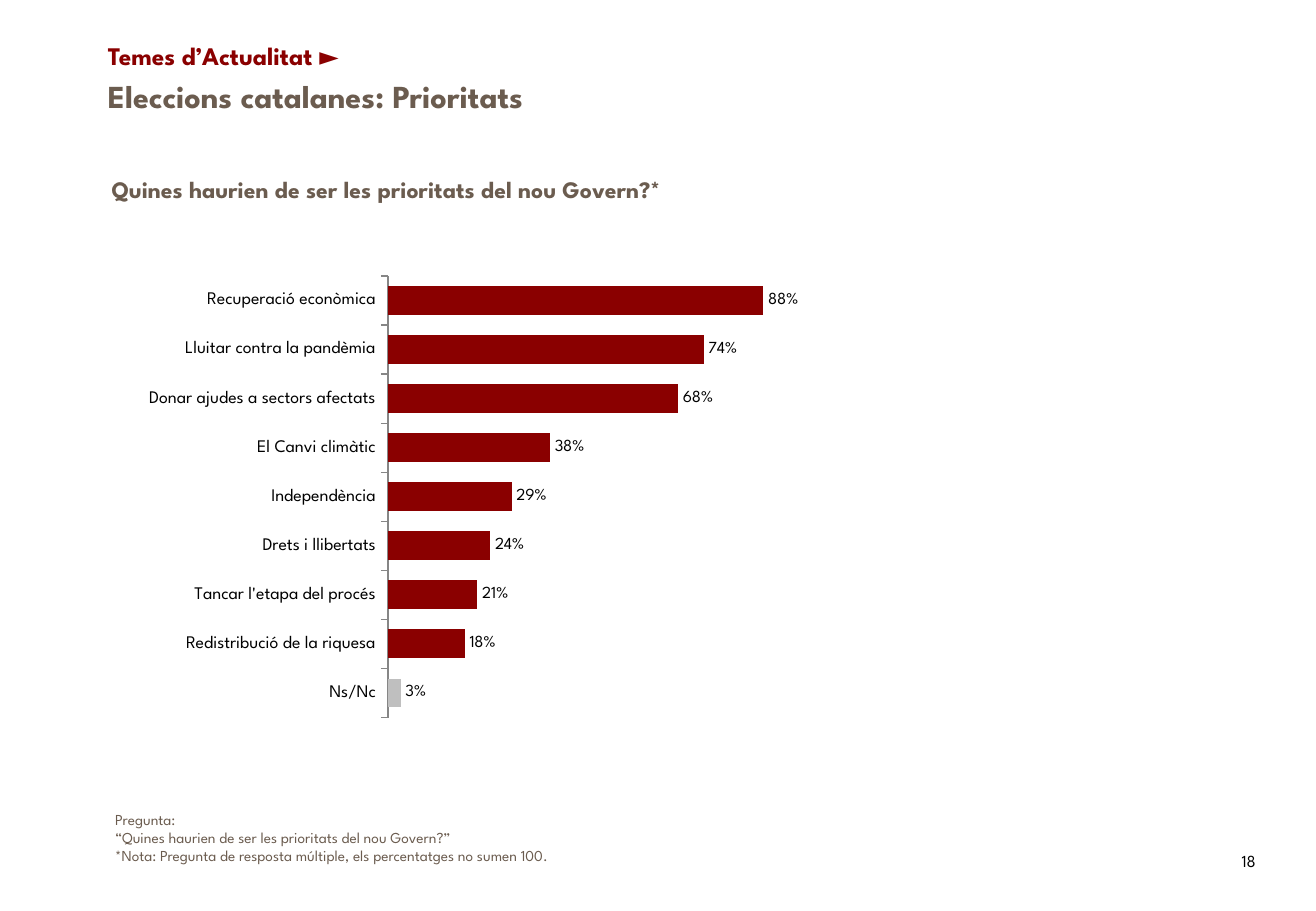
"""Build the slide on the priorities of the new Catalan government."""
from dataclasses import dataclass

from pptx import Presentation
from pptx.chart.chart import Chart
from pptx.chart.data import CategoryChartData
from pptx.dml.color import RGBColor
from pptx.enum.chart import XL_CHART_TYPE as ChartType
from pptx.enum.chart import XL_LABEL_POSITION as LabelPosition
from pptx.enum.chart import XL_TICK_MARK as TickMark
from pptx.enum.text import MSO_ANCHOR as Anchor
from pptx.oxml import parse_xml
from pptx.oxml.ns import nsdecls, qn
from pptx.slide import Slide
from pptx.util import Inches, Pt


@dataclass(frozen=True)
class Theme:
    font: str = "League Spartan"
    red: RGBColor = RGBColor(0x8A, 0x00, 0x00)
    brown: RGBColor = RGBColor(0x6B, 0x5C, 0x4F)
    black: RGBColor = RGBColor(0x00, 0x00, 0x00)
    gray: RGBColor = RGBColor(0xBF, 0xBF, 0xBF)
    axis: RGBColor = RGBColor(0x86, 0x86, 0x86)
    title: float = 19
    section: float = 15
    question: float = 14
    category: float = 10.5
    body: float = 10
    note: float = 9


@dataclass(frozen=True)
class Box:
    left: float
    top: float
    width: float
    height: float

    def lengths(self) -> list[int]:
        return [Inches(n) for n in (self.left, self.top, self.width, self.height)]


@dataclass(frozen=True)
class Label:
    box: Box
    lines: tuple[str, ...]
    size: float
    color: RGBColor
    bold: bool = False
    anchor: Anchor = Anchor.TOP


@dataclass(frozen=True)
class Priority:
    name: str
    share: float


THEME = Theme()

LABELS = (
    Label(Box(0.82, 1.39, 5.33, 0.34),
          ("Quines haurien de ser les prioritats del nou Govern?*",),
          THEME.question, THEME.brown, bold=True),
    Label(Box(0.79, 0.28, 9.56, 0.36), ("Temes d’Actualitat ►",),
          THEME.section, THEME.red, bold=True, anchor=Anchor.MIDDLE),
    Label(Box(0.79, 0.63, 9.81, 0.31), ("Eleccions catalanes: Prioritats",),
          THEME.title, THEME.brown, bold=True, anchor=Anchor.MIDDLE),
    Label(Box(10.12, 6.95, 0.67, 0.4), ("18",), THEME.body, THEME.black),
    Label(Box(0.85, 6.62, 9.57, 0.56),
          ("Pregunta:",
           "“Quines haurien de ser les prioritats del nou Govern?”",
           "*Nota: Pregunta de resposta múltiple, els percentatges no sumen 100."),
          THEME.note, THEME.brown),
)

PRIORITIES = (
    Priority("Recuperació econòmica", 0.88),
    Priority("Lluitar contra la pandèmia", 0.74),
    Priority("Donar ajudes a sectors afectats", 0.68),
    Priority("El Canvi climàtic", 0.38),
    Priority("Independència", 0.29),
    Priority("Drets i llibertats", 0.24),
    Priority("Tancar l'etapa del procés", 0.21),
    Priority("Redistribució de la riquesa", 0.18),
    Priority("Ns/Nc", 0.03),
)

CHART_BOX = Box(0.79, 2.07, 6.16, 4.04)
PLOT_BOX = Box(0.39, 0.05, 0.57, 0.9)


def add_label(slide: Slide, label: Label) -> None:
    frame = slide.shapes.add_textbox(*label.box.lengths()).text_frame
    frame.word_wrap = True
    frame.vertical_anchor = label.anchor
    frame.text = "\n".join(label.lines)
    for paragraph in frame.paragraphs:
        font = paragraph.font
        font.name, font.size, font.bold = THEME.font, Pt(label.size), label.bold
        font.color.rgb = label.color


def place_plot(chart: Chart, box: Box) -> None:
    plot_area = chart._chartSpace.chart.plotArea
    for layout in plot_area.findall(qn("c:layout")):
        plot_area.remove(layout)
    plot_area.insert(0, parse_xml(
        f'<c:layout {nsdecls("c")}><c:manualLayout><c:layoutTarget val="inner"/>'
        '<c:xMode val="edge"/><c:yMode val="edge"/>'
        f'<c:x val="{box.left}"/><c:y val="{box.top}"/>'
        f'<c:w val="{box.width}"/><c:h val="{box.height}"/>'
        '</c:manualLayout></c:layout>'))


def add_priorities_chart(slide: Slide) -> None:
    data = CategoryChartData(number_format="0%")
    data.categories = [priority.name for priority in PRIORITIES]
    data.add_series("Series 1", [priority.share for priority in PRIORITIES])
    chart = slide.shapes.add_chart(
        ChartType.BAR_CLUSTERED, *CHART_BOX.lengths(), data).chart
    chart.has_legend = chart.has_title = False
    chart.font.name, chart.font.size = THEME.font, Pt(THEME.body)
    chart.font.color.rgb = THEME.black
    place_plot(chart, PLOT_BOX)

    categories = chart.category_axis
    categories.reverse_order = True
    categories.has_major_gridlines = False
    categories.major_tick_mark = TickMark.OUTSIDE
    categories.tick_labels.font.size = Pt(THEME.category)
    categories.format.line.color.rgb = THEME.axis

    values = chart.value_axis
    values.minimum_scale, values.maximum_scale = 0, 1
    values.has_major_gridlines = False
    values.visible = False

    plot = chart.plots[0]
    plot.gap_width = 70
    plot.vary_by_categories = False
    plot.has_data_labels = True
    labels = plot.data_labels
    labels.show_value = True
    labels.position = LabelPosition.OUTSIDE_END
    labels.number_format, labels.number_format_is_linked = "0%", False

    series = plot.series[0]
    no_answer = series.points[len(PRIORITIES) - 1]
    for bars, color in ((series, THEME.red), (no_answer, THEME.gray)):
        bars.format.fill.solid()
        bars.format.fill.fore_color.rgb = color


def main() -> None:
    presentation = Presentation()
    presentation.slide_width = Inches(10.83)
    presentation.slide_height = Inches(7.5)
    slide = presentation.slides.add_slide(presentation.slide_layouts[6])
    for label in LABELS:
        add_label(slide, label)
    add_priorities_chart(slide)
    presentation.save("out.pptx")


if __name__ == "__main__":
    main()
